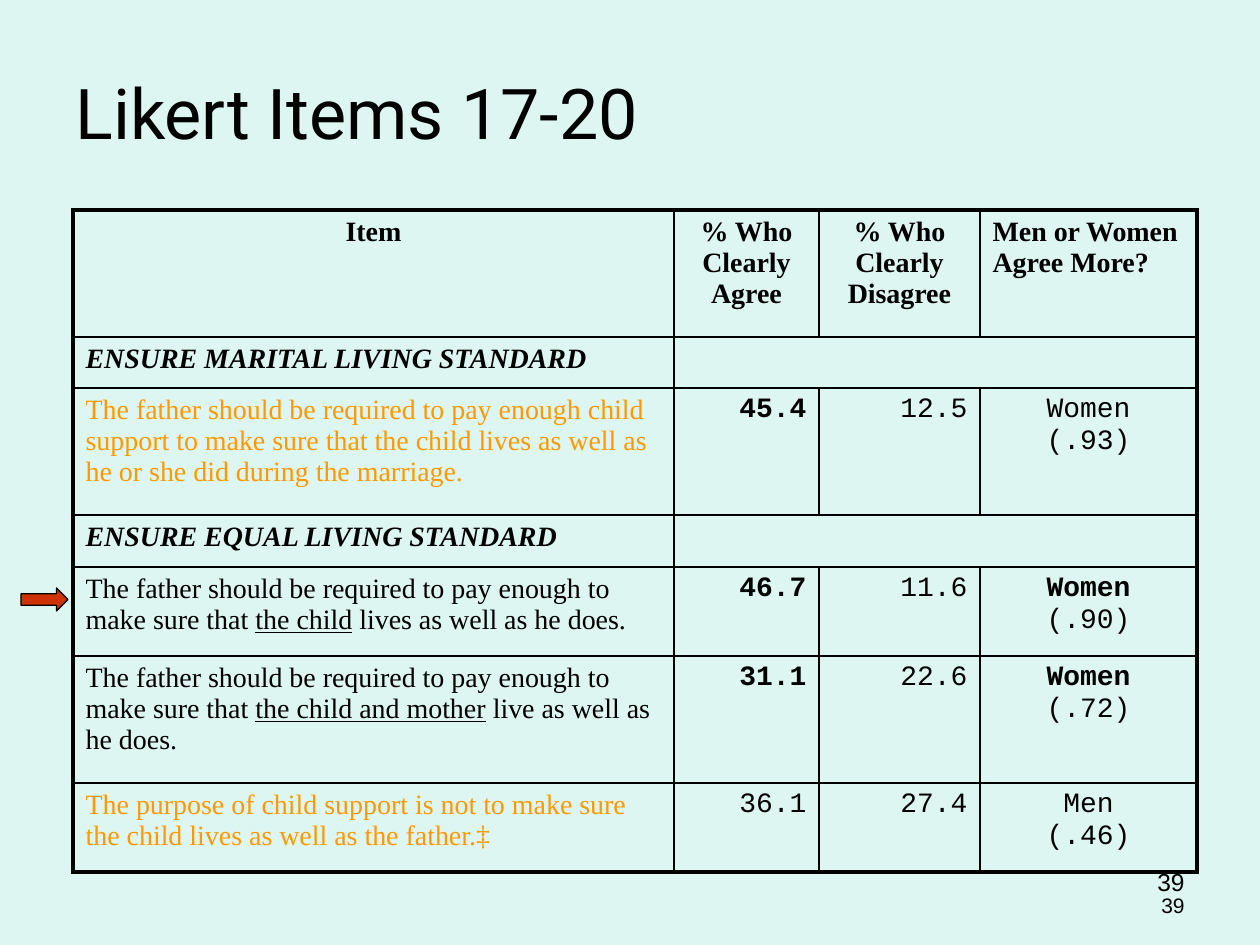
import lxml.etree
import pptx
import pptx.dml.color
import pptx.enum.shapes
import pptx.enum.text
import pptx.oxml.ns
import pptx.util

ALIGN = pptx.enum.text.PP_ALIGN
ANCHOR = pptx.enum.text.MSO_ANCHOR
BLACK, ORANGE, RED, MINT = "000000", "FF9900", "CC3300", "DEF6F1"
SERIF, MONO, SANS = "Times New Roman", "Courier New", "Arial"

TITLE = "Likert Items 17-20"
PAGE_NUMBER = "39"
HEADERS = ["Item", "% Who Clearly Agree", "% Who Clearly Disagree", "Men or Women Agree More?"]
HEADER_ALIGNS = [ALIGN.CENTER, ALIGN.CENTER, ALIGN.CENTER, ALIGN.LEFT]
VALUE_ALIGNS = [ALIGN.RIGHT, ALIGN.RIGHT, ALIGN.CENTER]

# A plain string is a section heading. An item holds its text pieces (every second
# one underlined), colour, agree, disagree, who agrees more, and its bold values.
ROWS = [
    "ENSURE MARITAL LIVING STANDARD",
    (["The father should be required to pay enough child support to make sure that "
      "the child lives as well as he or she did during the marriage."],
     ORANGE, "45.4", "12.5", "Women\n(.93)", {"45.4"}),
    "ENSURE EQUAL LIVING STANDARD",
    (["The father should be required to pay enough to make sure that ", "the child",
      " lives as well as he does."],
     BLACK, "46.7", "11.6", "Women\n(.90)", {"46.7", "Women"}),
    (["The father should be required to pay enough to make sure that ",
      "the child and mother", " live as well as he does."],
     BLACK, "31.1", "22.6", "Women\n(.72)", {"31.1", "Women"}),
    (["The purpose of child support is not to make sure the child lives as well as "
      "the father.‡"],
     ORANGE, "36.1", "27.4", "Men\n(.46)", set()),
]
TABLE_LEFT, TABLE_TOP = 73, 210
COLUMN_WIDTHS = [601, 145, 161, 217]
ROW_HEIGHTS = [127, 51, 127, 52, 89, 127, 89]


def px(length):
    return round(length * 914400 / 126)


def rgb(value):
    return pptx.dml.color.RGBColor.from_string(value)


def style(span, size, name, color=BLACK, bold=False, italic=False, underline=False):
    font = span.font
    font.size, font.name = pptx.util.Pt(size), name
    font.bold, font.italic, font.underline = bold, italic, underline
    font.color.rgb = rgb(color)


def write(frame, text, align, size, name, bold_lines=(), italic=False):
    """Put one paragraph per line of text; lines in bold_lines become bold."""
    frame.text = text
    for para in frame.paragraphs:
        para.alignment = align
        style(para.runs[0], size, name, bold=para.text in bold_lines, italic=italic)


def add_label(page, bounds, text, align, size, name, anchor=ANCHOR.TOP):
    box = page.shapes.add_textbox(*map(px, bounds))
    frame = box.text_frame
    frame.word_wrap = True
    frame.vertical_anchor = anchor
    write(frame, text, align, size, name)


def set_borders(cell, widths):
    """Draw black borders; widths are points for left, right, top, bottom."""
    properties = cell._tc.get_or_add_tcPr()
    qn = pptx.oxml.ns.qn
    for side, width in zip("LRTB", widths):
        line = lxml.etree.SubElement(properties, qn(f"a:ln{side}"), w=str(pptx.util.Pt(width)))
        fill = lxml.etree.SubElement(line, qn("a:solidFill"))
        lxml.etree.SubElement(fill, qn("a:srgbClr"), val=BLACK)


def fill_row(table, index, content):
    cells = [table.cell(index, column) for column in range(len(COLUMN_WIDTHS))]
    if isinstance(content, str):
        write(cells[0].text_frame, content, ALIGN.LEFT, 16, SERIF, {content}, italic=True)
        cells[1].merge(cells[3])
        return
    pieces, color, *values, bold_lines = content
    para = cells[0].text_frame.paragraphs[0]
    for number, piece in enumerate(pieces):
        span = para.add_run()
        span.text = piece
        style(span, 16, SERIF, color, underline=number % 2 == 1)
    for cell, value, align in zip(cells[1:], values, VALUE_ALIGNS):
        write(cell.text_frame, value, align, 16, MONO, bold_lines)


def add_item_table(page):
    row_count, column_count = len(ROW_HEIGHTS), len(COLUMN_WIDTHS)
    bounds = (TABLE_LEFT, TABLE_TOP, sum(COLUMN_WIDTHS), sum(ROW_HEIGHTS))
    table = page.shapes.add_table(row_count, column_count, *map(px, bounds)).table
    table.first_row = table.horz_banding = False
    for column, width in zip(table.columns, COLUMN_WIDTHS):
        column.width = px(width)
    for row, height in zip(table.rows, ROW_HEIGHTS):
        row.height = px(height)

    for column, (header, align) in enumerate(zip(HEADERS, HEADER_ALIGNS)):
        write(table.cell(0, column).text_frame, header, align, 16, SERIF, {header})
    for index, content in enumerate(ROWS, start=1):
        fill_row(table, index, content)

    for row in range(row_count):
        for column in range(column_count):
            cell = table.cell(row, column)
            last = column + (cell.span_width if cell.is_merge_origin else 1) == column_count
            outer = (column == 0, last, row == 0, row == row_count - 1)
            set_borders(cell, [3 if edge else 1 for edge in outer])
            cell.fill.background()


def add_marker(page):
    arrow = page.shapes.add_shape(
        pptx.enum.shapes.MSO_SHAPE.RIGHT_ARROW, *map(px, (21, 588, 47, 23)))
    arrow.shadow.inherit = False
    arrow.fill.solid()
    arrow.fill.fore_color.rgb = rgb(RED)
    arrow.line.color.rgb = rgb(BLACK)
    arrow.line.width = pptx.util.Pt(0.75)


def main():
    deck = pptx.Presentation()
    deck.slide_width, deck.slide_height = px(1260), px(945)
    page = deck.slides.add_slide(deck.slide_layouts[6])
    page.background.fill.solid()
    page.background.fill.fore_color.rgb = rgb(MINT)

    add_label(page, (903, 861, 294, 65), PAGE_NUMBER, ALIGN.RIGHT, 14, SANS)
    add_label(page, (903, 861, 294, 63), PAGE_NUMBER, ALIGN.RIGHT, 12, SANS, ANCHOR.BOTTOM)
    add_item_table(page)
    add_label(page, (63, 63, 1071, 97), TITLE, ALIGN.LEFT, 40, "Roboto")
    add_marker(page)
    deck.save("out.pptx")


if __name__ == "__main__":
    main()
